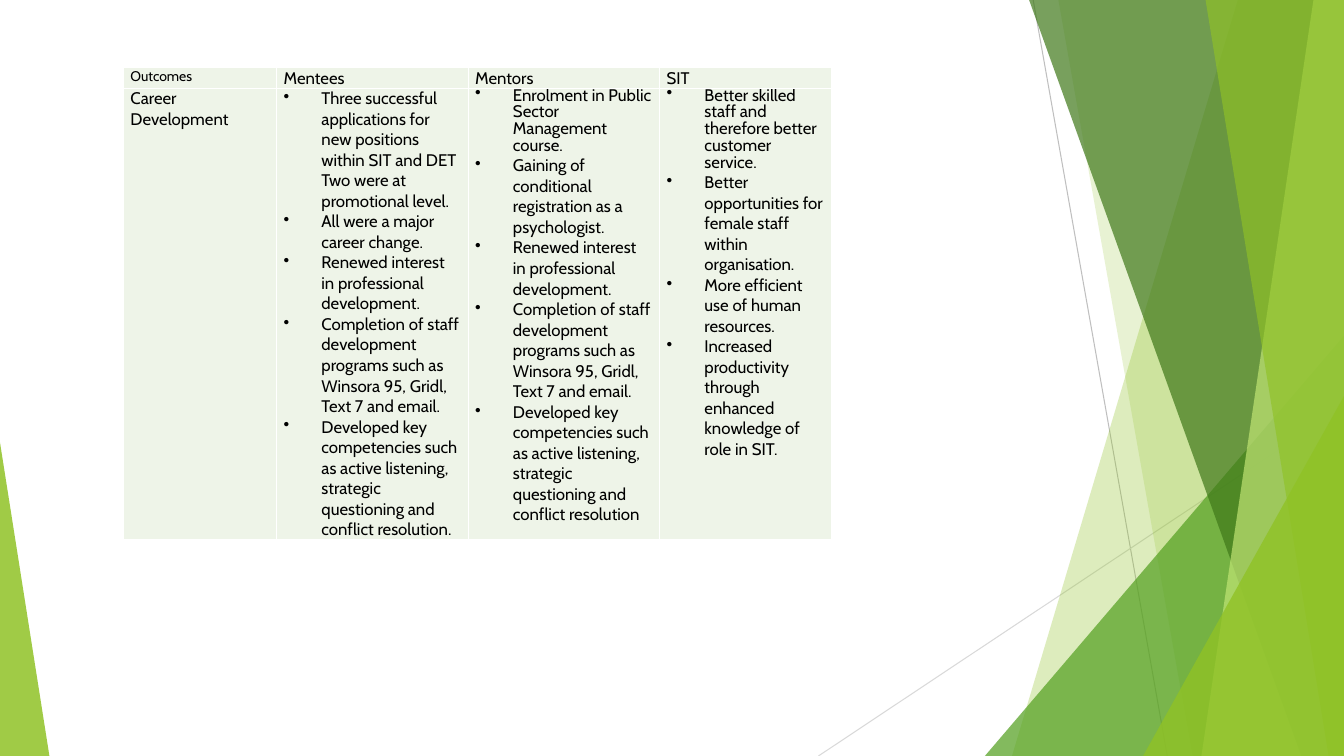
from dataclasses import dataclass

from lxml import etree
from pptx import Presentation
from pptx import util as u
from pptx.dml.color import RGBColor
from pptx.enum import shapes
from pptx.oxml import ns

Pt = u.Pt
WIDTH, HEIGHT = 960, 540

LIME = RGBColor(0x90, 0xC2, 0x26)
GREEN = RGBColor(0x54, 0xA0, 0x21)
FOREST = RGBColor(0x3F, 0x78, 0x19)
PALE_LIME = RGBColor(0xC0, 0xE4, 0x74)
GREY = RGBColor(0xBF, 0xBF, 0xBF)
LIGHT_GREY = RGBColor(0xD9, 0xD9, 0xD9)
CELL_TINT = RGBColor(0xEE, 0xF4, 0xE8)
WHITE = RGBColor(0xFF, 0xFF, 0xFF)
BLACK = RGBColor(0, 0, 0)


@dataclass
class Ray:
    """A thin line across the background."""
    start: tuple[float, float]
    end: tuple[float, float]
    color: RGBColor


@dataclass
class Band:
    """A slanted band that reaches the right edge of the slide."""
    top_x: float
    bottom_x: float
    color: RGBColor
    opacity: int


@dataclass
class Wedge:
    """A triangle that stands on the bottom edge of the slide."""
    left: float
    top: float
    width: float
    apex: float
    color: RGBColor
    opacity: int


RAYS = [
    Ray((738, 0), (833.8, HEIGHT), GREY),
    Ray((WIDTH, 290.2), (584.6, HEIGHT), LIGHT_GREY),
]
FACETS = [
    Band(884.2, 722.9, LIME, 30),
    Band(756, 851.8, LIME, 20),
    Wedge(703.5, 239.8, 256.5, 1, GREEN, 72),
    Band(735.1, 929.5, FOREST, 70),
    Band(938.2, 858.2, PALE_LIME, 70),
    Band(861.1, 949, LIME, 65),
    Wedge(816.5, 283, 143.5, 1, LIME, 80),
    Wedge(0, 316.1, 35.3, 0, LIME, 85),
]

# Outcomes shared by mentees and mentors
RENEWED = "Renewed interest in professional development."
PROGRAMS = ("Completion of staff development programs such as "
            "Winsora 95, Gridl, Text 7 and email.")
COMPETENCIES = ("Developed key competencies such as active listening, "
                "strategic questioning and conflict resolution")

HEADINGS = ["Outcomes", "Mentees", "Mentors", "SIT"]
MENTEE_OUTCOMES = [
    "Three successful applications for new positions within SIT and DET "
    "Two were at promotional level.",
    "All were a major career change.",
    RENEWED,
    PROGRAMS,
    COMPETENCIES + ".",
]
MENTOR_OUTCOMES = [
    "Enrolment in Public Sector Management course.",
    "Gaining of conditional registration as a psychologist.",
    RENEWED,
    PROGRAMS,
    COMPETENCIES,
]
SIT_OUTCOMES = [
    "Better skilled staff and therefore better customer service.",
    "Better opportunities for female staff within organisation.",
    "More efficient use of human resources.",
    "Increased productivity through enhanced knowledge of role in SIT.",
]
COLUMN_WIDTHS = [109.4, 136.8, 136.8, 123.1]
ROW_HEIGHTS = [13.7, 291.6]


def add_child(parent, tag: str, **attributes):
    return etree.SubElement(parent, ns.qn(tag), attributes)


def draw_ray(slide, ray: Ray) -> None:
    line = slide.shapes.add_connector(
        shapes.MSO_CONNECTOR.STRAIGHT, *map(Pt, ray.start + ray.end))
    line.line.color.rgb = ray.color
    line.line.width = Pt(0.75)
    add_child(line._element.spPr, "a:effectLst")


def draw_facet(slide, facet: Band | Wedge) -> None:
    if isinstance(facet, Band):
        outline = slide.shapes.build_freeform(Pt(facet.top_x), 0)
        outline.add_line_segments([
            (Pt(WIDTH), 0), (Pt(WIDTH), Pt(HEIGHT)),
            (Pt(facet.bottom_x), Pt(HEIGHT))])
        shape = outline.convert_to_shape()
    else:
        shape = slide.shapes.add_shape(
            shapes.MSO_SHAPE.ISOSCELES_TRIANGLE, Pt(facet.left), Pt(facet.top),
            Pt(facet.width), Pt(HEIGHT - facet.top))
        shape.adjustments[0] = facet.apex
    shape.shadow.inherit = False
    shape.line.fill.background()
    shape.fill.solid()
    shape.fill.fore_color.rgb = facet.color
    color = shape._element.spPr.find(".//" + ns.qn("a:srgbClr"))
    add_child(color, "a:alpha", val=str(facet.opacity * 1000))


def write(paragraph, content: str, *, size: float = 12, bullet: bool = False,
          spacing: float | None = None) -> None:
    run = paragraph.add_run()
    run.text = content
    run.font.name = "Cabin"
    run.font.size = Pt(size)
    run.font.bold = False
    run.font.color.rgb = BLACK
    if spacing:
        paragraph.line_spacing = Pt(spacing)
    if bullet:
        properties = paragraph._p.get_or_add_pPr()
        properties.set("marL", str(Pt(27)))
        properties.set("indent", str(-Pt(27)))
        add_child(properties, "a:buChar", char="•")
        tabs = add_child(properties, "a:tabLst")
        add_child(tabs, "a:tab", pos=str(Pt(18)), algn="l")


def format_cell(cell) -> None:
    cell.margin_left = cell.margin_right = Pt(5)
    cell.margin_top = cell.margin_bottom = 0
    properties = cell._tc.get_or_add_tcPr()
    for side in ("a:lnL", "a:lnR", "a:lnT", "a:lnB"):
        border = add_child(properties, side, w=str(Pt(1)))
        add_child(add_child(border, "a:solidFill"), "a:srgbClr", val=str(WHITE))
    cell.fill.solid()
    cell.fill.fore_color.rgb = CELL_TINT


def draw_outcomes(slide) -> None:
    outcomes = slide.shapes.add_table(
        len(ROW_HEIGHTS), len(COLUMN_WIDTHS), Pt(88.2), Pt(48.5),
        Pt(sum(COLUMN_WIDTHS)), Pt(sum(ROW_HEIGHTS))).table
    outcomes.first_row = outcomes.horz_banding = False
    for column, width in zip(outcomes.columns, COLUMN_WIDTHS):
        column.width = Pt(width)
    for row, height in zip(outcomes.rows, ROW_HEIGHTS):
        row.height = Pt(height)
    for cell in outcomes.iter_cells():
        format_cell(cell)

    # Heading row and row label
    for column, heading in enumerate(HEADINGS):
        write(outcomes.cell(0, column).text_frame.paragraphs[0], heading,
              size=12 if column else 10)
    write(outcomes.cell(1, 0).text_frame.paragraphs[0], "Career Development")

    # Bulleted outcomes; the last two columns open with a tighter item
    for column, items in enumerate(
            [MENTEE_OUTCOMES, MENTOR_OUTCOMES, SIT_OUTCOMES], start=1):
        frame = outcomes.cell(1, column).text_frame
        for index, item in enumerate(items):
            paragraph = frame.add_paragraph() if index else frame.paragraphs[0]
            tight = index == 0 and column > 1
            write(paragraph, item, bullet=True, spacing=12 if tight else None)


def main() -> None:
    deck = Presentation()
    deck.slide_width, deck.slide_height = Pt(WIDTH), Pt(HEIGHT)
    slide = deck.slides.add_slide(deck.slide_layouts[6])

    # Background facets
    for ray in RAYS:
        draw_ray(slide, ray)
    for facet in FACETS:
        draw_facet(slide, facet)

    # Outcomes table
    draw_outcomes(slide)
    deck.save("out.pptx")


if __name__ == "__main__":
    main()
